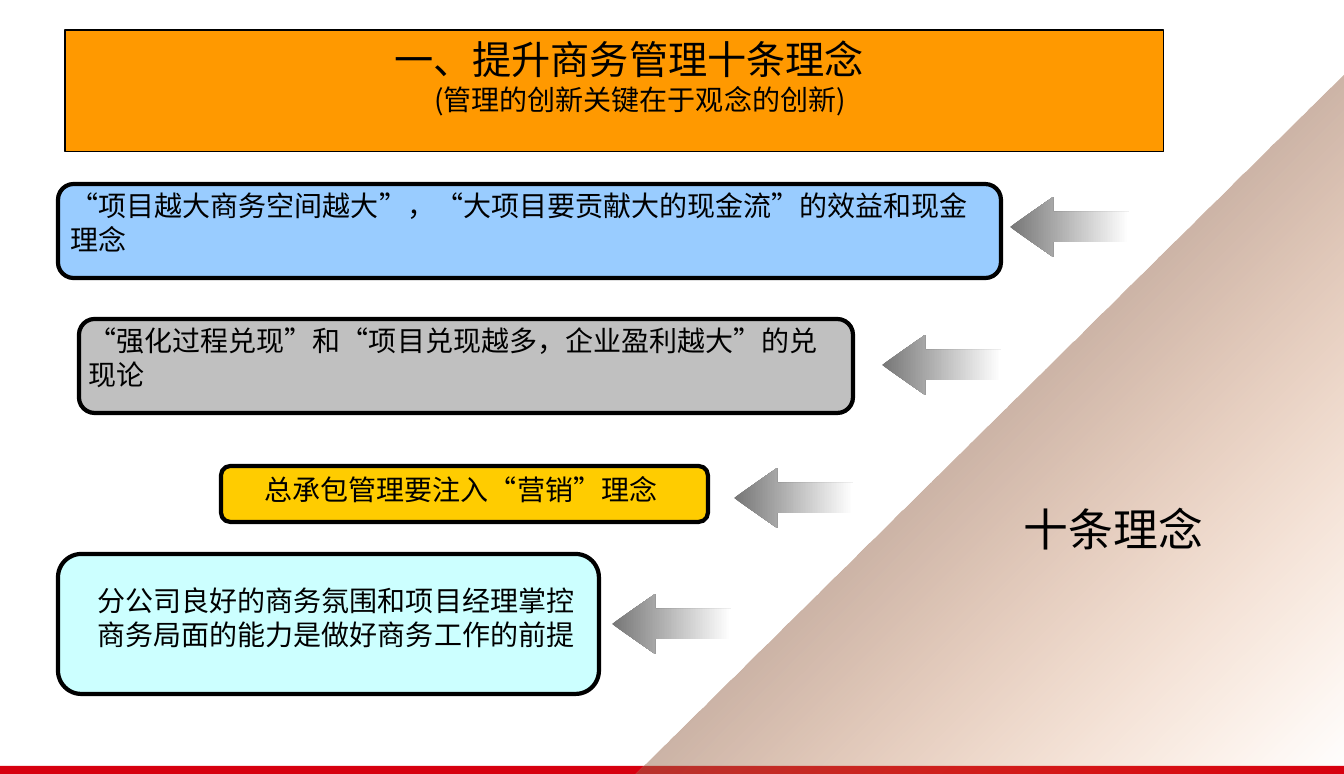
from dataclasses import dataclass

from lxml.etree import SubElement
from pptx import Presentation
from pptx.dml.color import RGBColor
from pptx.enum.lang import MSO_LANGUAGE_ID
from pptx.enum.shapes import MSO_SHAPE
from pptx.enum.text import MSO_ANCHOR, MSO_AUTO_SIZE, PP_ALIGN
from pptx.oxml.ns import qn
from pptx.util import Pt

EMU_PER_PX = 914400 / 100.8


@dataclass(frozen=True)
class Theme:
    font: str = "Noto Sans CJK SC"
    ink: str = "000000"
    banner: str = "FF9900"
    footer: str = "D7000F"
    blue: str = "99CCFF"
    grey: str = "C0C0C0"
    yellow: str = "FFCC00"
    cyan: str = "CCFFFF"
    arrow: tuple = ("767676", "FFFFFF")
    triangle: tuple = ("ED7D31", "44546A")
    heading_size: int = 28
    body_size: int = 20
    label_size: int = 32


THEME = Theme()

# box, fill, text insets (left, top, right), alignment, text
CARDS = [
    ((58, 184, 943, 94), THEME.blue, (8, 0, 13), PP_ALIGN.LEFT,
     "“项目越大商务空间越大”，“大项目要贡献大的现金流”的效益和现金理念"),
    ((79, 319, 774, 94), THEME.grey, (5, 0, 5), PP_ALIGN.LEFT,
     "“强化过程兑现”和“项目兑现越多，企业盈利越大”的兑现论"),
    ((221, 466, 487, 56), THEME.yellow, (41, 4, 34), PP_ALIGN.LEFT,
     "总承包管理要注入“营销”理念"),
    ((58, 554, 541, 140), THEME.cyan, (24, 23, 9), PP_ALIGN.CENTER,
     "分公司良好的商务氛围和项目经理掌控商务局面的能力是做好商务工作的前提"),
]
ARROW_CORNERS = [(1010, 197), (882, 335), (734, 468), (612, 594)]


def px(length):
    return round(length * EMU_PER_PX)


def rgb(color):
    return RGBColor.from_string(color)


def paint(shape, fill, line_width=None):
    shape.fill.solid()
    shape.fill.fore_color.rgb = rgb(fill)
    if line_width:
        shape.line.color.rgb = rgb(THEME.ink)
        shape.line.width = Pt(line_width)


def add_preset(slide, preset, box):
    shape = slide.shapes.add_shape(preset, *map(px, box))
    shape.shadow.inherit = False
    shape.line.fill.background()
    return shape


def paint_gradient(shape, colors, angle=0):
    shape.fill.gradient()
    shape.fill.gradient_angle = angle
    for stop, color in zip(shape.fill.gradient_stops, colors):
        stop.color.rgb = rgb(color)
    for stop, position in zip(shape.fill.gradient_stops, (0, 1)):
        stop.position = position


def set_up_frame(frame, left=10, top=5, right=10):
    frame.word_wrap = True
    frame.auto_size = MSO_AUTO_SIZE.NONE
    frame.vertical_anchor = MSO_ANCHOR.TOP
    frame.margin_left, frame.margin_top, frame.margin_right = map(px, (left, top, right))
    frame.margin_bottom = 0


def write(paragraph, text, size, align):
    paragraph.alignment = align
    run = paragraph.add_run()
    run.text = text
    run.font.size = Pt(size)
    run.font.name = THEME.font
    run.font.color.rgb = rgb(THEME.ink)
    run.font.language_id = MSO_LANGUAGE_ID.SIMPLIFIED_CHINESE
    east_asian = SubElement(run.font._element, qn("a:ea"))
    east_asian.set("typeface", THEME.font)


def fill_title(slide):
    title = slide.shapes.title
    title.left, title.top, title.width, title.height = map(px, (65, 30, 1099, 122))
    paint(title, THEME.banner, 0.75)
    frame = title.text_frame
    set_up_frame(frame, left=39)
    write(frame.paragraphs[0], "一、提升商务管理十条理念", THEME.heading_size, PP_ALIGN.CENTER)
    subtitle = frame.add_paragraph()
    write(subtitle, "(管理的创新关键在于观念的创新)", THEME.body_size, PP_ALIGN.CENTER)
    subtitle._p.get_or_add_pPr().set("marL", str(px(22)))


def add_triangle(slide):
    """Corner triangle that fades out towards its right angle."""
    triangle = add_preset(slide, MSO_SHAPE.RIGHT_TRIANGLE, (636, 69, 704, 713))
    triangle.rotation = 270
    paint_gradient(triangle, THEME.triangle, 45)
    stop_colors = triangle.element.spPr.iter(qn("a:srgbClr"))
    for color, opacity in zip(stop_colors, (0, 100000)):
        SubElement(color, qn("a:alpha")).set("val", str(opacity))


def add_label(slide):
    label = slide.shapes.add_textbox(*map(px, (1010, 497, 207, 64)))
    set_up_frame(label.text_frame)
    write(label.text_frame.paragraphs[0], "十条理念", THEME.label_size, PP_ALIGN.CENTER)


def add_arrow(slide, left, top):
    arrow = add_preset(slide, MSO_SHAPE.LEFT_ARROW, (left, top, 119, 60))
    arrow.adjustments[0] = 0.5
    arrow.adjustments[1] = 0.72
    paint_gradient(arrow, THEME.arrow)


def add_card(slide, box, fill, insets, align, text):
    card = add_preset(slide, MSO_SHAPE.ROUNDED_RECTANGLE, box)
    paint(card, fill, 3)
    set_up_frame(card.text_frame, *insets)
    write(card.text_frame.paragraphs[0], text, THEME.body_size, align)


def main():
    deck = Presentation()
    deck.slide_width, deck.slide_height = px(1344), px(774)
    slide = deck.slides.add_slide(deck.slide_layouts[5])
    fill_title(slide)
    footer = add_preset(slide, MSO_SHAPE.RECTANGLE, (0, 766, 1344, 8))
    paint(footer, THEME.footer)
    add_triangle(slide)
    add_label(slide)
    for left, top in ARROW_CORNERS:
        add_arrow(slide, left, top)
    for card in CARDS:
        add_card(slide, *card)
    deck.save("out.pptx")


if __name__ == "__main__":
    main()
